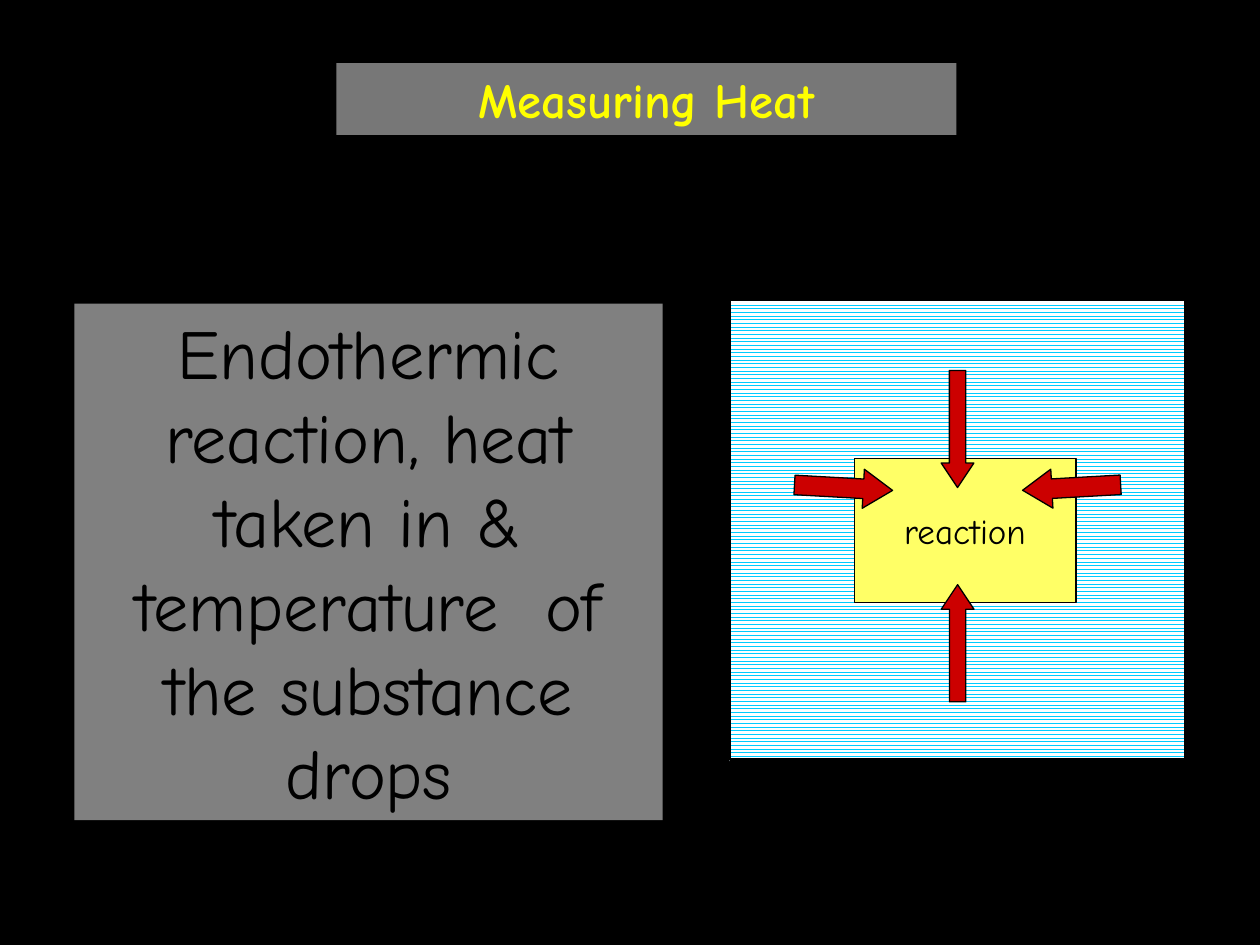
from lxml import etree
from pptx import Presentation, util as u
from pptx.dml.color import RGBColor
from pptx.enum import dml, shapes, text
from pptx.oxml import ns

FONT = "Comic Neue"


def color(value):
    return RGBColor.from_string(value)


def write(shape, words, **formats):
    frame = shape.text_frame
    frame.auto_size = text.MSO_AUTO_SIZE.NONE
    frame.text = words
    para = frame.paragraphs[0]
    para.alignment = text.PP_ALIGN.CENTER
    para.space_before = u.Pt(0)
    span = para.runs[0]
    span.font.color.rgb = color(formats.pop("ink"))
    for name, value in {"name": FONT, **formats}.items():
        setattr(span.font, name, value)
    return frame


deck = Presentation()
deck.slide_width, deck.slide_height = u.Inches(10), u.Inches(7.5)
page = deck.slides.add_slide(deck.slide_layouts[1])
page.background.fill.solid()
page.background.fill.fore_color.rgb = color("000000")

title, body = page.placeholders
for box, place, back in (
    (title, (2.67, 0.5, 4.92, 0.57), "777777"),
    (body, (0.59, 2.41, 4.67, 4.1), "808080"),
):
    box.left, box.top, box.width, box.height = map(u.Inches, place)
    box.fill.solid()
    box.fill.fore_color.rgb = color(back)

write(title, "Measuring Heat", size=u.Pt(28), bold=True, ink="FFFF00")
frame = write(
    body,
    "Endothermic reaction, heat taken in & temperature  of the substance drops",
    size=u.Pt(40),
    ink="000000",
)
frame.vertical_anchor = text.MSO_ANCHOR.TOP
settings = frame.paragraphs[0]._p.get_or_add_pPr()
settings.set("marL", "0")
settings.set("indent", "0")
etree.SubElement(settings, ns.qn("a:buNone"))

beaker = page.shapes.add_group_shape().shapes
left, right, rim, water_top, bottom = 5.79, 9.41, 1.7, 2.39, 6.03
water = beaker.add_shape(
    shapes.MSO_SHAPE.RECTANGLE,
    *map(u.Inches, (left, water_top, right - left, 3.65)),
)
water.shadow.inherit = False
water.line.fill.background()
water.fill.patterned()
water.fill.pattern = dml.MSO_PATTERN.ZIG_ZAG
water.fill.fore_color.rgb = color("00CCFF")
water.fill.back_color.rgb = color("FFFFFF")

reaction = beaker.add_shape(
    shapes.MSO_SHAPE.RECTANGLE, *map(u.Inches, (6.78, 3.64, 1.76, 1.14))
)
frame = write(reaction, "reaction", size=u.Pt(20), ink="000000")
frame.word_wrap = False
frame.vertical_anchor = text.MSO_ANCHOR.MIDDLE

for wall in (
    (left, rim, left, bottom),
    (right, rim, right, bottom),
    (left, bottom, right, bottom),
):
    line = beaker.add_connector(
        shapes.MSO_CONNECTOR.STRAIGHT, *map(u.Inches, wall)
    )
    line.line.color.rgb = color("000000")
    line.line.width = u.Pt(2.25)
    etree.SubElement(line._element.spPr, ns.qn("a:effectLst"))

arrows = []
for place, turn in (
    ((7.47, 2.94, 0.26, 0.93), 0),
    ((7.47, 4.64, 0.26, 0.93), 180),
    ((6.54, 3.48, 0.31, 0.78), 273.2),
    ((8.35, 3.48, 0.31, 0.78), 86.8),
):
    arrow = beaker.add_shape(
        shapes.MSO_SHAPE.DOWN_ARROW, *map(u.Inches, place)
    )
    arrow.rotation = turn
    arrow.adjustments[0], arrow.adjustments[1] = 0.5, 0.75
    arrows.append(arrow)

for shape in (reaction, *arrows):
    shape.shadow.inherit = False
    shape.fill.solid()
    shape.fill.fore_color.rgb = color("FFFF66" if shape is reaction else "CC0000")
    shape.line.color.rgb = color("000000")
    shape.line.width = u.Pt(0.75)

deck.save("out.pptx")
